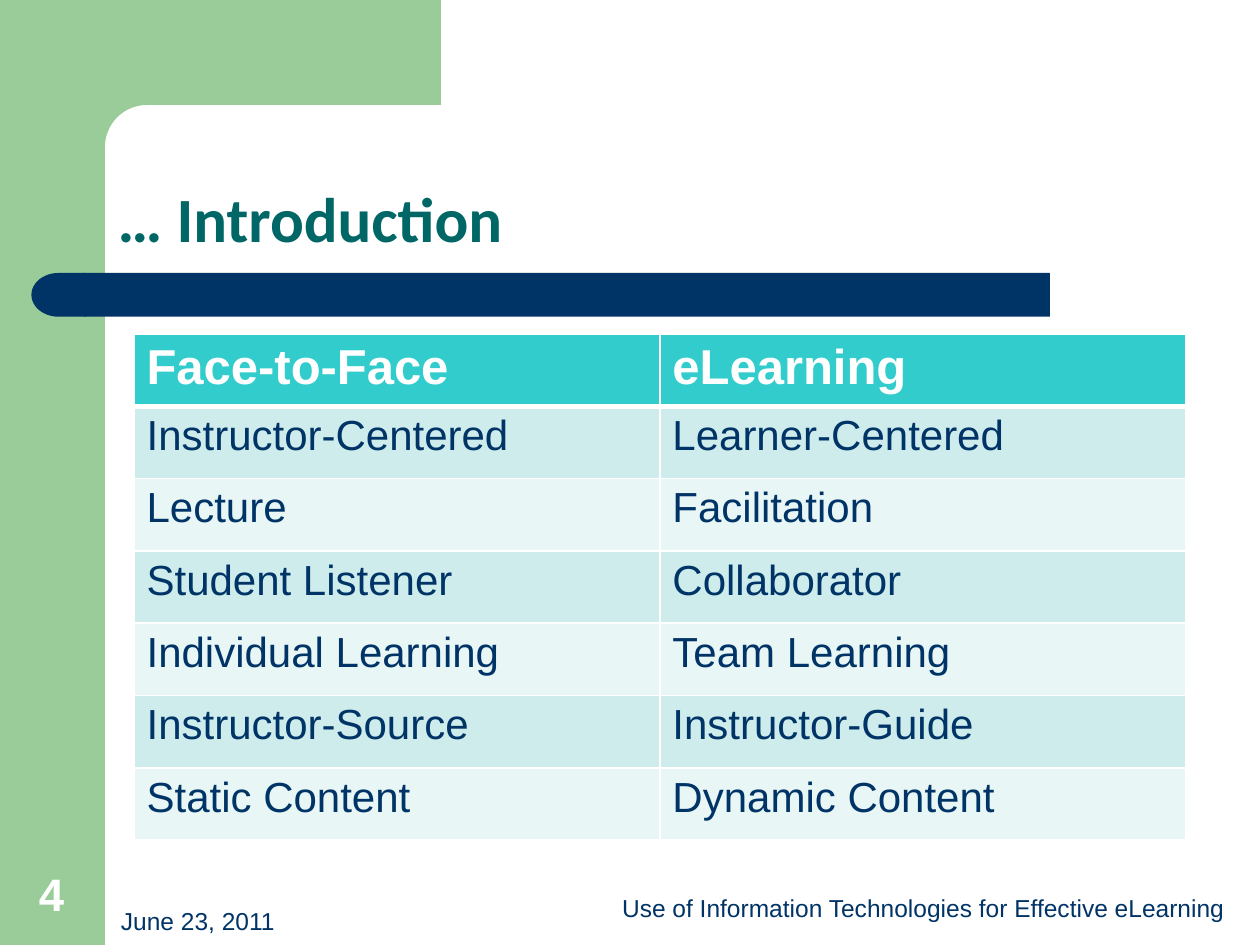
"""Build the introduction slide comparing face-to-face teaching with eLearning."""
from math import cos, pi, sin

from lxml.etree import SubElement
from pptx import Presentation
from pptx.dml.color import RGBColor
from pptx.enum.shapes import MSO_SHAPE
from pptx.enum.text import MSO_ANCHOR, MSO_AUTO_SIZE, PP_ALIGN
from pptx.oxml.ns import qn
from pptx.util import Pt

GREEN = RGBColor(0x99, 0xCC, 0x99)
NAVY = RGBColor(0x00, 0x33, 0x66)
TEAL = RGBColor(0x00, 0x66, 0x66)
WHITE = RGBColor(0xFF, 0xFF, 0xFF)
HEADER = RGBColor(0x33, 0xCC, 0xCC)
BANDS = [RGBColor(0xE8, 0xF6, 0xF6), RGBColor(0xCE, 0xEC, 0xEC)]


def style(sp, color):
    sp.shadow.inherit = False
    sp.fill.solid()
    sp.fill.fore_color.rgb = color
    sp.line.fill.background()


def set_font(p, name, size, color, bold=False):
    p.font.name = name
    p.font.size = Pt(size)
    p.font.color.rgb = color
    p.font.bold = bold


prs = Presentation()
prs.slide_width, prs.slide_height = Pt(720), Pt(540)
s = prs.slides.add_slide(prs.slide_layouts[5])

side = s.shapes.add_shape(MSO_SHAPE.RECTANGLE, 0, 0, Pt(60), Pt(540))
style(side, GREEN)

radius, center = 24, 84
angles = [pi / 2 * i / 16 for i in range(17)]
arc = [(center - radius * sin(a), center - radius * cos(a)) for a in angles]
outline = [(252, 60), *arc, (60, 92), (36, 92), (36, 0)]
fb = s.shapes.build_freeform(Pt(252), 0)
fb.add_line_segments([(Pt(x), Pt(y)) for x, y in outline], close=True)
style(fb.convert_to_shape(), GREEN)

bar = s.shapes.add_shape(MSO_SHAPE.RECTANGLE, Pt(48), Pt(156), Pt(552), Pt(25))
style(bar, NAVY)
cap = s.shapes.add_shape(MSO_SHAPE.FLOWCHART_DELAY, Pt(18), Pt(156), Pt(31), Pt(25))
style(cap, NAVY)
cap._element.spPr.get_or_add_xfrm().set("flipH", "1")

title = s.shapes.title
title.left, title.top, title.width, title.height = Pt(60), Pt(60), Pt(624), Pt(90)
tf = title.text_frame
tf.text = "… Introduction"
tf.auto_size = MSO_AUTO_SIZE.NONE
tf.vertical_anchor = MSO_ANCHOR.BOTTOM
p = tf.paragraphs[0]
p.alignment = PP_ALIGN.LEFT
p.line_spacing = 0.9
set_font(p, "Calibri", 36, TEAL, True)

rows = [
    ("Face-to-Face", "eLearning"),
    ("Instructor-Centered", "Learner-Centered"),
    ("Lecture", "Facilitation"),
    ("Student Listener", "Collaborator"),
    ("Individual Learning", "Team Learning"),
    ("Instructor-Source", "Instructor-Guide"),
    ("Static Content", "Dynamic Content"),
]
row_height = 41.35
table = s.shapes.add_table(len(rows), 2, Pt(76.6), Pt(190.8), Pt(601),
                           Pt(row_height * len(rows))).table
for i, row in enumerate(rows):
    table.rows[i].height = Pt(row_height)
    for j, text in enumerate(row):
        cell = table.cell(i, j)
        cell.text = text
        tcPr = cell._tc.get_or_add_tcPr()
        for tag in ("a:lnL", "a:lnR", "a:lnT", "a:lnB"):
            thick = (i, tag) in [(0, "a:lnB"), (1, "a:lnT")]
            ln = SubElement(tcPr, qn(tag), w=str(Pt(3 if thick else 1)))
            SubElement(SubElement(ln, qn("a:solidFill")), qn("a:srgbClr"), val=str(WHITE))
        cell.fill.solid()
        cell.fill.fore_color.rgb = BANDS[i % 2] if i else HEADER
        p = cell.text_frame.paragraphs[0]
        if i:
            set_font(p, "Arial", 24, NAVY)
        else:
            set_font(p, "Arial", 28, WHITE, True)

footers = [
    ("Use of Information Technologies for Effective eLearning",
     337.7, 497.5, 380, 33, PP_ALIGN.CENTER, 14, NAVY, False),
    ("4", 6.5, 491.8, 46, 38, PP_ALIGN.CENTER, 26, WHITE, True),
    ("June 23, 2011", 62, 500.4, 168, 37.5, PP_ALIGN.LEFT, 14, NAVY, False),
]
for text, x, y, w, h, align, size, color, bold in footers:
    tf = s.shapes.add_textbox(Pt(x), Pt(y), Pt(w), Pt(h)).text_frame
    tf.word_wrap = True
    tf.vertical_anchor = MSO_ANCHOR.BOTTOM
    tf.text = text
    p = tf.paragraphs[0]
    p.alignment = align
    set_font(p, "Arial", size, color, bold)

prs.save("out.pptx")
